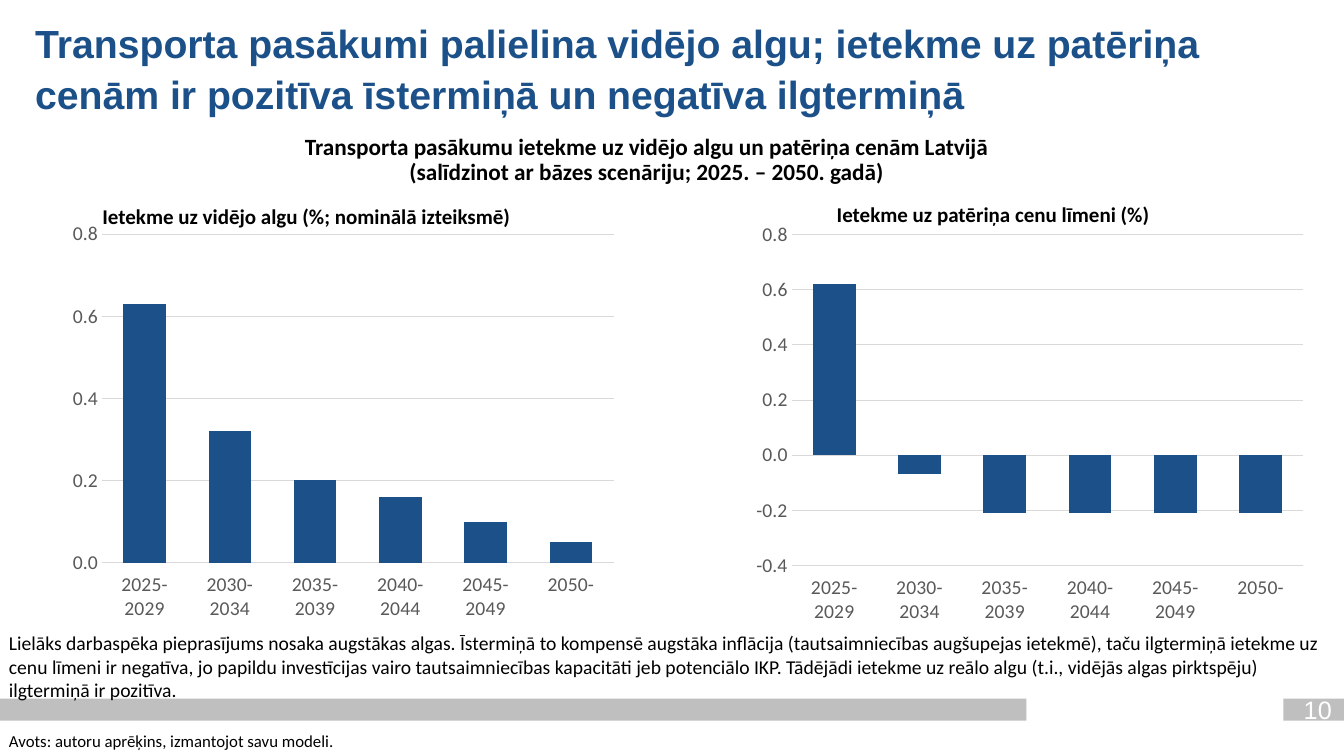
from lxml.etree import SubElement
from pptx import Presentation
from pptx.chart.data import CategoryChartData
from pptx.dml.color import RGBColor
from pptx.enum.chart import XL_CHART_TYPE, XL_TICK_LABEL_POSITION, XL_TICK_MARK
from pptx.enum.shapes import MSO_SHAPE
from pptx.enum.text import MSO_ANCHOR, PP_ALIGN
from pptx.oxml.ns import qn
from pptx.util import Inches, Pt

COLORS = {
    "blue": "1B5089",
    "bar": "BFBFBF",
    "white": "FFFFFF",
    "black": "000000",
    "axis": "595959",
    "grid": "D9D9D9",
}
PERIODS = ["2025-2029", "2030-2034", "2035-2039", "2040-2044", "2045-2049", "2050-"]


def rgb(name):
    return RGBColor.from_string(COLORS[name])


def add_text(box, lines, size, font="Calibri", color="black", bold=False,
             align=PP_ALIGN.LEFT, spacing=1.0, anchor=MSO_ANCHOR.TOP):
    """Add a wrapped text box with one paragraph per line."""
    tf = slide.shapes.add_textbox(*map(Inches, box)).text_frame
    tf.word_wrap = True
    tf.vertical_anchor = anchor
    for i, line in enumerate(lines):
        p = tf.paragraphs[0] if i == 0 else tf.add_paragraph()
        p.alignment = align
        p.line_spacing = spacing
        r = p.add_run()
        r.text = line
        r.font.size = Pt(size)
        r.font.name = font
        r.font.bold = bold
        r.font.color.rgb = rgb(color)


prs = Presentation()
prs.slide_width = Inches(13.33)
prs.slide_height = Inches(7.5)
slide = prs.slides.add_slide(prs.slide_layouts[6])

# Footer band and page number
for box, color in [
    ((0, 6.93, 10.18, 0.22), "bar"),
    ((12.73, 6.93, 0.6, 0.22), "bar"),
    ((10.29, 6.39, 2.36, 1.11), "white"),
]:
    sp = slide.shapes.add_shape(MSO_SHAPE.RECTANGLE, *map(Inches, box))
    sp.shadow.inherit = False
    sp.fill.solid()
    sp.fill.fore_color.rgb = rgb(color)
    sp.line.fill.background()
add_text((12.74, 6.86, 0.66, 0.36), ["10"], 18, "Arial", "white",
         align=PP_ALIGN.CENTER, anchor=MSO_ANCHOR.MIDDLE)

# Title and headings
add_text((0.25, 0.1, 12.95, 1.11),
         ["Transporta pasākumi palielina vidējo algu; ietekme uz patēriņa cenām "
          "ir pozitīva īstermiņā un negatīva ilgtermiņā"],
         28, "Arial", "blue", bold=True, spacing=1.1, anchor=MSO_ANCHOR.MIDDLE)
add_text((0.67, 1.95, 4.74, 0.37), ["Ietekme uz vidējo algu (%; nominālā izteiksmē)"],
         15, bold=True, align=PP_ALIGN.CENTER, spacing=1.07)
add_text((8.2, 1.95, 3.39, 0.35), ["Ietekme uz patēriņa cenu līmeni (%)"], 15, bold=True)
add_text((0.25, 1.29, 12.32, 0.65),
         ["Transporta pasākumu ietekme uz vidējo algu un patēriņa cenām Latvijā",
          "(salīdzinot ar bāzes scenāriju; 2025. – 2050. gadā)"],
         16.6, bold=True, align=PP_ALIGN.CENTER, spacing=0.9)

# Charts: box, axis minimum, plot area (x, y, w, h as fractions), values
for box, minimum, plot_area, values in [
    ((0.38, 2.2, 5.74, 4.09), 0, (0.11, 0.03, 0.884, 0.797),
     [0.63, 0.32, 0.2, 0.16, 0.1, 0.05]),
    ((7.22, 2.21, 5.74, 4.27), -0.4, (0.11, 0.028, 0.884, 0.768),
     [0.62, -0.07, -0.21, -0.21, -0.21, -0.21]),
]:
    data = CategoryChartData()
    data.categories = PERIODS
    data.add_series("Series 1", values)
    chart = slide.shapes.add_chart(
        XL_CHART_TYPE.COLUMN_CLUSTERED, *map(Inches, box), data).chart
    chart.has_title = False
    chart.has_legend = False
    chart.font.size = Pt(14)
    chart.font.name = "Calibri"
    chart.font.color.rgb = rgb("black")

    plot = chart.plots[0]
    plot.gap_width = 100
    plot.vary_by_categories = False
    series = plot.series[0]
    series.invert_if_negative = False
    series.format.fill.solid()
    series.format.fill.fore_color.rgb = rgb("blue")

    cat_axis, val_axis = chart.category_axis, chart.value_axis
    for axis in (cat_axis, val_axis):
        axis.major_tick_mark = XL_TICK_MARK.NONE
        axis.minor_tick_mark = XL_TICK_MARK.NONE
        axis.tick_labels.font.size = Pt(14)
        axis.tick_labels.font.name = "Calibri"
        axis.tick_labels.font.color.rgb = rgb("axis")
    cat_axis.tick_label_position = XL_TICK_LABEL_POSITION.LOW
    val_axis.minimum_scale = minimum
    val_axis.maximum_scale = 0.8
    val_axis.major_unit = 0.2
    val_axis.tick_labels.number_format = "#,##0.0"
    val_axis.tick_labels.number_format_is_linked = False
    val_axis.format.line.fill.background()
    for line in (cat_axis.format.line, val_axis.major_gridlines.format.line):
        line.color.rgb = rgb("grid")
        line.width = Pt(0.75)

    area = chart._chartSpace.find(".//" + qn("c:plotArea"))
    for old in area.findall(qn("c:layout")):
        area.remove(old)
    layout = SubElement(area, qn("c:layout"))
    area.insert(0, layout)
    manual = SubElement(layout, qn("c:manualLayout"))
    settings = [("layoutTarget", "inner"), ("xMode", "edge"), ("yMode", "edge")]
    for tag, value in settings + list(zip("xywh", plot_area)):
        SubElement(manual, qn("c:" + tag)).set("val", str(value))

# Conclusion and source
add_text((-0.01, 6.21, 13.35, 0.81),
         ["Lielāks darbaspēka pieprasījums nosaka augstākas algas. Īstermiņā to kompensē "
          "augstāka inflācija (tautsaimniecības augšupejas ietekmē), taču ilgtermiņā "
          "ietekme uz cenu līmeni ir negatīva, jo papildu investīcijas vairo "
          "tautsaimniecības kapacitāti jeb potenciālo IKP. Tādējādi ietekme uz reālo algu "
          "(t.i., vidējās algas pirktspēju) ilgtermiņā ir pozitīva."], 14)
add_text((-0.01, 7.2, 3.49, 0.3), ["Avots: autoru aprēķins, izmantojot savu modeli."], 12)

prs.save("out.pptx")
